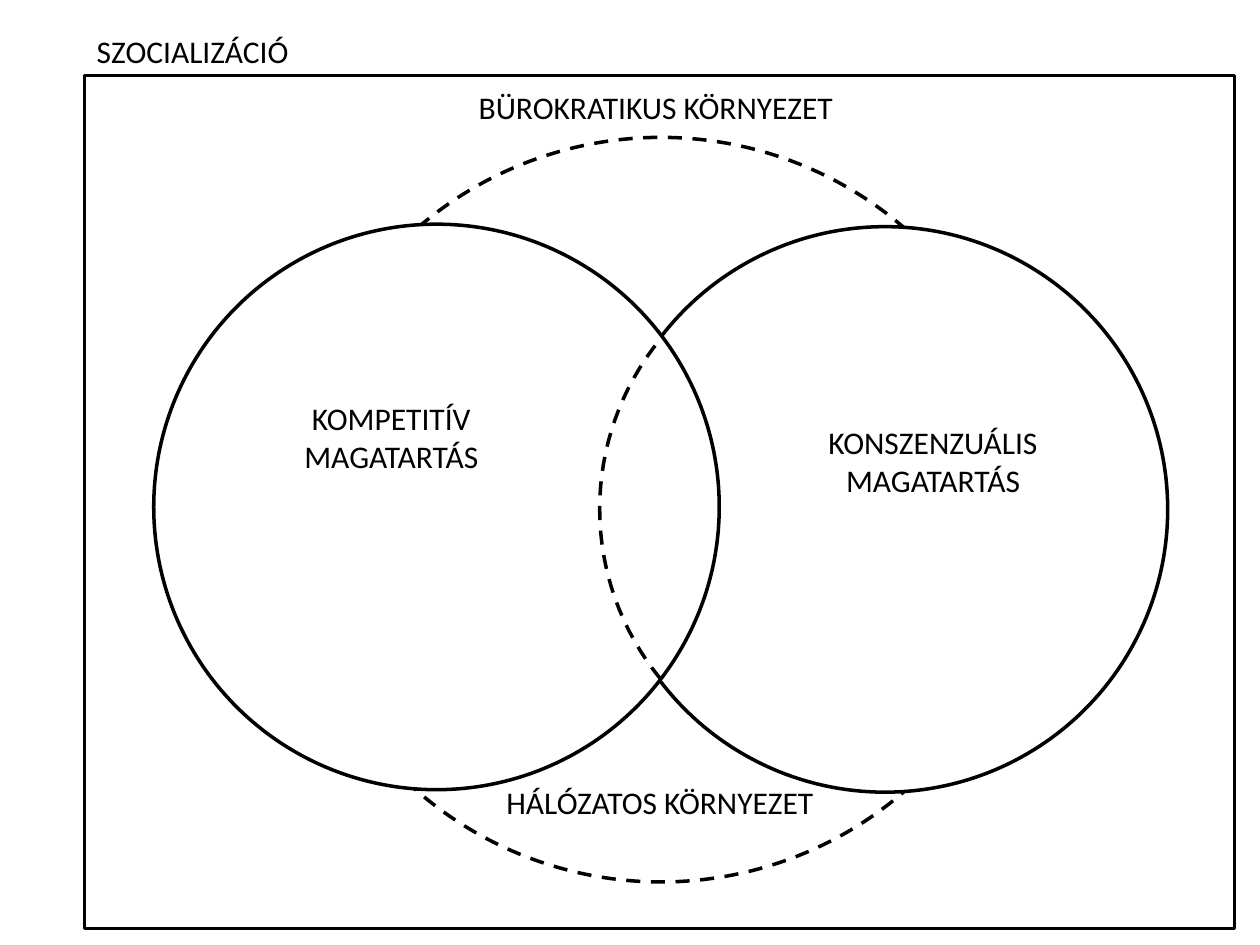
from dataclasses import dataclass
from math import asin, cos, sin

from pptx import Presentation
from pptx.dml.color import RGBColor
from pptx.enum.dml import MSO_LINE_DASH_STYLE as Dash
from pptx.enum.shapes import MSO_SHAPE as Preset
from pptx.enum.text import MSO_AUTO_SIZE as AutoSize, PP_ALIGN as Align
from pptx.util import Cm, Pt

COLORS = {"ink": "000000", "paper": "FFFFFF"}
FONT = "Calibri"


@dataclass
class Outline:
    """A preset shape with a black outline, measured in centimetres."""
    preset: Preset
    left: float
    top: float
    width: float
    height: float
    filled: bool = False
    dashed: bool = False


@dataclass
class Label:
    """A text box, measured in centimetres, with one paragraph per line."""
    lines: tuple[str, ...]
    left: float
    top: float
    width: float
    height: float
    align: Align = Align.CENTER


DIAMETER = 11.4
CIRCLES = [
    Outline(Preset.OVAL, 5.82, 2.77, 15.01, 15.01, dashed=True),
    Outline(Preset.OVAL, 12.14, 4.57, DIAMETER, DIAMETER, filled=True),
    Outline(Preset.OVAL, 3.1, 4.52, DIAMETER, DIAMETER, filled=True),
]
FRAME = Outline(Preset.RECTANGLE, 1.7, 1.52, 23.19, 17.2)
LABELS = [
    Label(("SZOCIALIZÁCIÓ",), 1.7, 0.53, 6.2, 1.02, Align.LEFT),
    Label(("BÜROKRATIKUS KÖRNYEZET",), 9.4, 1.65, 7.8, 1.02, Align.LEFT),
    Label(("KOMPETITÍV", "MAGATARTÁS"), 3.99, 7.92, 7.8, 1.8),
    Label(("KONSZENZUÁLIS", "MAGATARTÁS"), 14.91, 8.41, 7.8, 1.8),
    Label(("HÁLÓZATOS KÖRNYEZET",), 9.7, 15.67, 7.21, 1.45),
]


def color(name: str) -> RGBColor:
    """Look up a named colour."""
    return RGBColor.from_string(COLORS[name])


def style(shape, filled: bool, dashed: bool) -> None:
    """Give a shape its outline and its fill."""
    shape.shadow.inherit = False
    if filled:
        shape.fill.solid()
        shape.fill.fore_color.rgb = color("paper")
    else:
        shape.fill.background()
    shape.line.color.rgb = color("ink")
    shape.line.width = Pt(2)
    if dashed:
        shape.line.dash_style = Dash.DASH


def draw_outline(page, item: Outline) -> None:
    """Draw one preset shape."""
    shape = page.shapes.add_shape(
        item.preset, Cm(item.left), Cm(item.top), Cm(item.width), Cm(item.height))
    style(shape, item.filled, item.dashed)


def draw_hidden_arc(page, left: float, middle: float, half_chord: float,
                    depth: float, steps: int = 32) -> None:
    """Draw the dashed arc of the right circle inside the left one."""
    radius = (half_chord ** 2 + depth ** 2) / (2 * depth)
    reach = asin(half_chord / radius)
    angles = [reach - 2 * reach * step / steps for step in range(steps + 1)]
    points = [(Cm(left + radius * (1 - cos(angle))), Cm(middle + radius * sin(angle)))
              for angle in angles]
    builder = page.shapes.build_freeform(*points[0])
    builder.add_line_segments(points[1:], close=False)
    style(builder.convert_to_shape(), filled=True, dashed=True)


def draw_label(page, label: Label) -> None:
    """Draw one text box."""
    box = page.shapes.add_textbox(
        Cm(label.left), Cm(label.top), Cm(label.width), Cm(label.height))
    frame = box.text_frame
    frame.word_wrap = True
    frame.auto_size = AutoSize.SHAPE_TO_FIT_TEXT
    frame.text = "\n".join(label.lines)
    for para in frame.paragraphs:
        para.alignment = label.align
        para.font.name = FONT
        para.font.size = Pt(18)
        para.font.color.rgb = color("ink")


def main() -> None:
    """Build the diagram of behaviours and environments."""
    deck = Presentation()
    deck.slide_width, deck.slide_height = Cm(25.4), Cm(19.05)
    page = deck.slides.add_slide(deck.slide_layouts[6])
    for circle in CIRCLES:
        draw_outline(page, circle)
    draw_hidden_arc(page, left=12.09, middle=10.26, half_chord=3.42, depth=1.22)
    draw_outline(page, FRAME)
    for label in LABELS:
        draw_label(page, label)
    deck.save("out.pptx")


if __name__ == "__main__":
    main()
